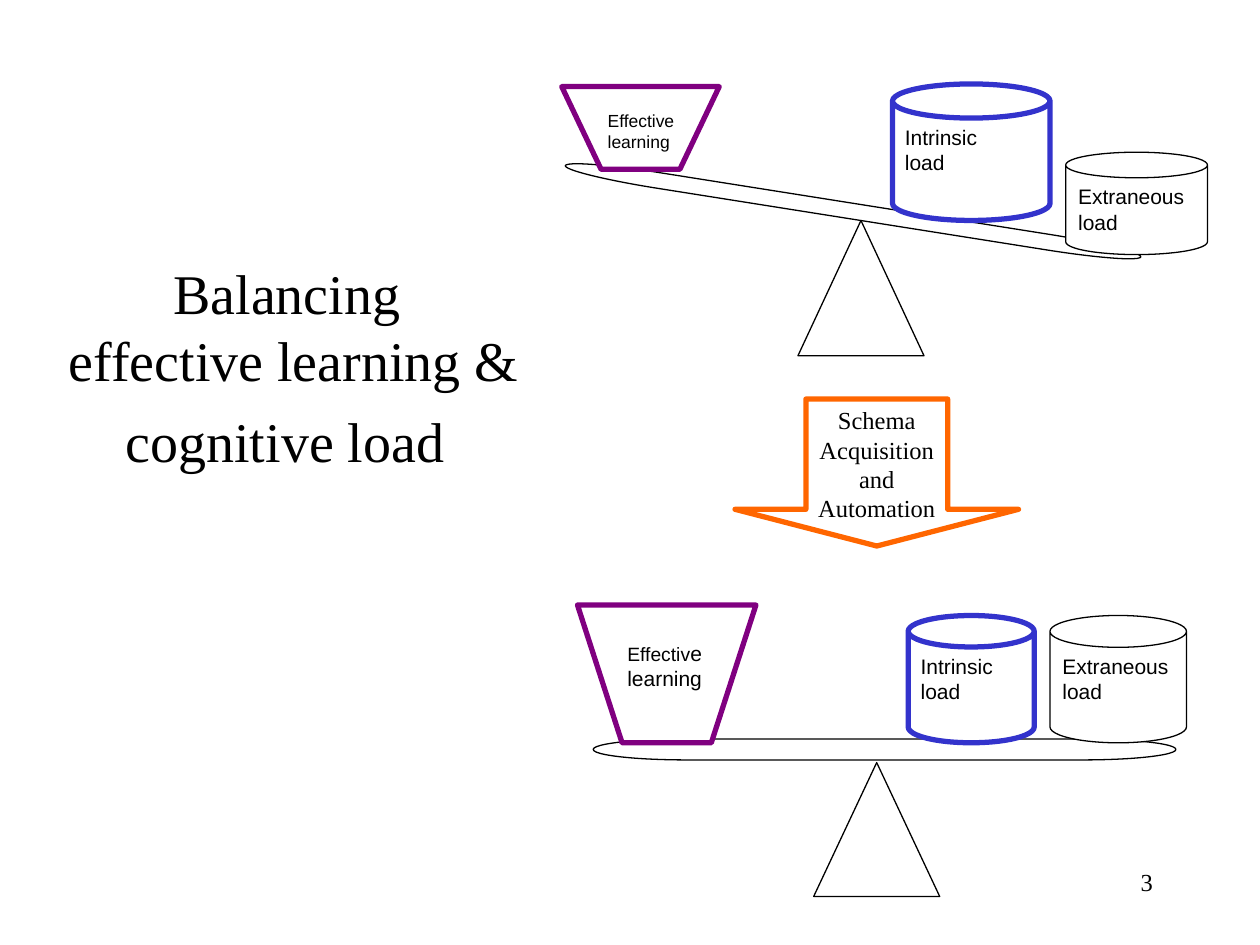
"""Builds the slide on balancing effective learning and cognitive load."""
from dataclasses import dataclass

from pptx import Presentation
from pptx.dml.color import RGBColor
from pptx.enum.shapes import MSO_SHAPE
from pptx.enum.text import MSO_ANCHOR, MSO_AUTO_SIZE, PP_ALIGN
from pptx.util import Emu, Pt

EMU_PER_PX = 9525


@dataclass(frozen=True)
class Theme:
    """Holds the colours, fonts and sizes of the slide."""
    paper: str = "FFFFFF"
    ink: str = "000000"
    learning: str = "800080"
    intrinsic: str = "3333CC"
    schema: str = "FF6600"
    serif: str = "Times New Roman"
    sans: str = "Arial"
    title: int = 32
    title_end: int = 40
    body: int = 14
    label: int = 12
    label_small: int = 11
    label_tiny: int = 10
    thin: float = 0.75
    thick: float = 3


def px(length):
    """Turns pixels into EMU."""
    return Emu(length * EMU_PER_PX)


def apply(target, values):
    """Sets every attribute named in the values."""
    for name, value in values.items():
        setattr(target, name, value)


class SlideBuilder:
    """Draws themed elements on the current slide."""

    def __init__(self, slide, theme):
        self.slide = slide
        self.theme = theme

    def style_run(self, run, font, size):
        """Formats one run in ink."""
        apply(run.font, {"name": font, "size": Pt(size)})
        run.font.color.rgb = RGBColor.from_string(self.theme.ink)

    def set_text(self, shape, paragraphs, font, align=PP_ALIGN.LEFT, **frame_values):
        """Fills a text frame with paragraphs of (text, size) runs."""
        frame = shape.text_frame
        apply(frame, {"word_wrap": True, "auto_size": MSO_AUTO_SIZE.NONE,
                      "vertical_anchor": MSO_ANCHOR.TOP, **frame_values})
        for index, runs in enumerate(paragraphs):
            paragraph = frame.add_paragraph() if index else frame.paragraphs[0]
            paragraph.alignment = align
            for text, size in runs:
                for number, line in enumerate(text.split("\n")):
                    if number:
                        paragraph.add_line_break()
                    run = paragraph.add_run()
                    run.text = line
                    self.style_run(run, font, size)

    def paint(self, shape, color, width):
        """Gives a shape a paper fill and an outline."""
        shape.shadow.inherit = False
        shape.fill.solid()
        shape.fill.fore_color.rgb = RGBColor.from_string(self.theme.paper)
        shape.line.color.rgb = RGBColor.from_string(color)
        shape.line.width = Pt(width)

    def title(self, box, runs):
        """Moves and fills the title placeholder."""
        shape = self.slide.shapes.title
        apply(shape, dict(zip(("left", "top", "width", "height"), map(px, box))))
        self.set_text(shape, [runs], self.theme.serif, PP_ALIGN.CENTER,
                      vertical_anchor=MSO_ANCHOR.MIDDLE)

    def text(self, box, words, align):
        """Adds a serif text box."""
        shape = self.slide.shapes.add_textbox(*map(px, box))
        self.set_text(shape, [[(words, self.theme.body)]], self.theme.serif, align)

    def preset(self, kind, box, color, width, rotation=0):
        """Adds an outlined preset shape."""
        shape = self.slide.shapes.add_shape(kind, *map(px, box))
        shape.rotation = rotation
        self.paint(shape, color, width)
        return shape

    def seesaw(self, pivot, beam, tilt=0):
        """Adds a pivot with a beam on it."""
        for kind, box, rotation in ((MSO_SHAPE.FLOWCHART_EXTRACT, pivot, 0),
                                    (MSO_SHAPE.FLOWCHART_TERMINATOR, beam, tilt)):
            self.preset(kind, box, self.theme.ink, self.theme.thin, rotation)

    def bucket(self, box, runs, margins):
        """Adds a learning bucket that narrows by a quarter on each side."""
        left, top, width, height = box
        inset = round(width / 4)
        right, bottom = left + width, top + height
        builder = self.slide.shapes.build_freeform(left, top, EMU_PER_PX)
        builder.add_line_segments([(left + inset, bottom), (right - inset, bottom),
                                   (right, top)], close=True)
        shape = builder.convert_to_shape()
        self.paint(shape, self.theme.learning, self.theme.thick)
        names = ("margin_left", "margin_top", "margin_right")
        self.set_text(shape, [runs], self.theme.sans,
                      **dict(zip(names, map(px, margins))))

    def can(self, box, lines, color, width):
        """Adds a load drawn as a can."""
        shape = self.preset(MSO_SHAPE.CAN, box, color, width)
        shape.adjustments[0] = 0.25
        self.set_text(shape, [[(line, self.theme.label)] for line in lines],
                      self.theme.sans)

    def loads(self, intrinsic, extraneous):
        """Adds the pair of loads."""
        self.can(intrinsic, ["Intrinsic", "load"], self.theme.intrinsic, self.theme.thick)
        self.can(extraneous, ["Extraneous load"], self.theme.ink, self.theme.thin)


def main():
    """Builds and saves the presentation."""
    theme = Theme()
    presentation = Presentation()
    apply(presentation, {"slide_width": px(960), "slide_height": px(720)})
    slide = presentation.slides.add_slide(presentation.slide_layouts[5])
    builder = SlideBuilder(slide, theme)

    builder.text((688, 656, 200, 48), "3", PP_ALIGN.RIGHT)
    builder.title((24, 192, 400, 176),
                  [("Balancing \neffective learning & cognitive load", theme.title),
                   (" ", theme.title_end)])
    builder.preset(MSO_SHAPE.UP_ARROW, (560, 304, 216, 112),
                   theme.schema, theme.thick, 180).adjustments[1] = 0.25

    builder.seesaw((608, 168, 96, 103), (428, 155, 444, 12), 9)
    builder.bucket((428, 66, 120, 63), [("Effective learning", theme.label_tiny)],
                   (35, 18, 24))
    builder.loads((680, 64, 120, 104), (812, 116, 108, 78))

    builder.seesaw((620, 581, 96, 102), (452, 563, 444, 16))
    builder.bucket((440, 461, 136, 105),
                   [("Effectiv", theme.label_small), ("e learning", theme.label)],
                   (38, 27, 30))
    builder.loads((692, 469, 96, 97), (800, 469, 104, 97))

    builder.text((608, 304, 120, 99), "Schema Acquisition and Automation",
                 PP_ALIGN.CENTER)
    presentation.save("out.pptx")


if __name__ == "__main__":
    main()
